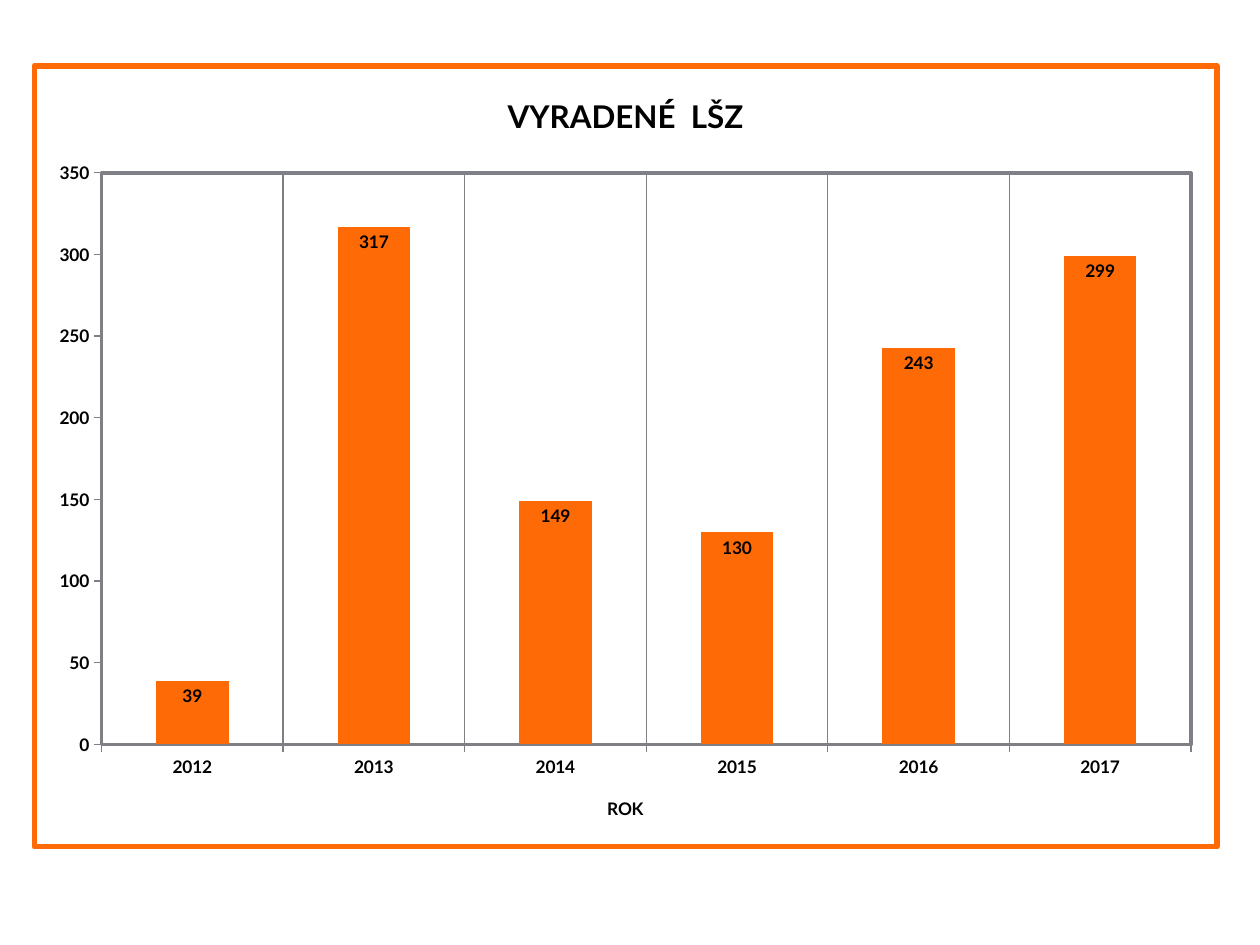
from lxml import etree
from pptx import Presentation
from pptx.chart.data import CategoryChartData
from pptx.dml.color import RGBColor
from pptx.enum.chart import XL_CHART_TYPE, XL_LABEL_POSITION, XL_TICK_MARK
from pptx.oxml import parse_xml
from pptx.oxml.ns import nsdecls, qn
from pptx.util import Inches, Pt

COLUMNS = XL_CHART_TYPE.COLUMN_CLUSTERED
INSIDE_END = XL_LABEL_POSITION.INSIDE_END
OUTSIDE = XL_TICK_MARK.OUTSIDE

COLORS = {"orange": "FE6A06", "grey": "7F7F86", "text": "000000"}
FONT = "Lato"
SLIDE_W, SLIDE_H = Inches(10), Inches(7.5)

TITLE = "VYRADENÉ  LŠZ"
AXIS_TITLE = "ROK"
RETIRED_BY_YEAR = {"2012": 39, "2013": 317, "2014": 149,
                   "2015": 130, "2016": 243, "2017": 299}

# Shares of the slide: left, top, width, height
CHART_BOX = (0.025, 0.067, 0.943, 0.832)
# Shares of the chart: position of the plot area
PLOT_BOX = {"x": 0.057, "y": 0.137, "w": 0.921, "h": 0.732}


def style_font(font, size):
    values = {"name": FONT, "size": Pt(size), "bold": True}
    for name, value in values.items():
        setattr(font, name, value)
    font.color.rgb = RGBColor.from_string(COLORS["text"])


def style_line(line, color, width):
    line.color.rgb = RGBColor.from_string(COLORS[color])
    line.width = Pt(width)


def set_title(owner, text, size):
    owner.has_title = True
    frame = (owner.chart_title if hasattr(owner, "chart_title")
             else owner.axis_title).text_frame
    frame.text = text
    style_font(frame.paragraphs[0].runs[0].font, size)


def outline(color, width):
    return parse_xml(
        f'<c:spPr {nsdecls("c", "a")}><a:noFill/>'
        f'<a:ln w="{Pt(width)}"><a:solidFill><a:srgbClr val="{COLORS[color]}"/>'
        '</a:solidFill><a:round/></a:ln></c:spPr>')


def place_plot(plot_area, box):
    for old in plot_area.findall(qn("c:layout")):
        plot_area.remove(old)
    layout = etree.Element(qn("c:layout"))
    manual = etree.SubElement(layout, qn("c:manualLayout"))
    settings = {"layoutTarget": "inner", "xMode": "edge", "yMode": "edge", **box}
    for name, value in settings.items():
        etree.SubElement(manual, qn(f"c:{name}")).set("val", str(value))
    plot_area.insert(0, layout)


def add_retired_chart(slide, box):
    data = CategoryChartData()
    data.categories = list(RETIRED_BY_YEAR)
    data.add_series("Series 1", list(RETIRED_BY_YEAR.values()))
    left, top, width, height = box
    chart = slide.shapes.add_chart(
        COLUMNS, int(left * SLIDE_W), int(top * SLIDE_H),
        int(width * SLIDE_W), int(height * SLIDE_H), data).chart
    chart.has_legend = False
    style_font(chart.font, 10)
    set_title(chart, TITLE, 18)

    # Columns and their values
    columns = chart.plots[0]
    columns.gap_width = 150
    columns.vary_by_categories = False
    fill = columns.series[0].format.fill
    fill.solid()
    fill.fore_color.rgb = RGBColor.from_string(COLORS["orange"])
    columns.has_data_labels = True
    labels = columns.data_labels
    labels.show_value = True
    labels.position = INSIDE_END
    style_font(labels.font, 10)

    # Axes: vertical grid lines only
    years, counts = chart.category_axis, chart.value_axis
    for axis in (years, counts):
        axis.major_tick_mark = OUTSIDE
        style_line(axis.format.line, "grey", 0.75)
        style_font(axis.tick_labels.font, 10)
    years.has_major_gridlines = True
    style_line(years.major_gridlines.format.line, "grey", 0.75)
    set_title(years, AXIS_TITLE, 10)
    counts.has_major_gridlines = False
    counts.minimum_scale, counts.maximum_scale, counts.major_unit = 0, 350, 50

    # Frames of the plot area and of the whole chart
    chart_part = chart.element.find(qn("c:chart"))
    plot_area = chart_part.find(qn("c:plotArea"))
    place_plot(plot_area, PLOT_BOX)
    plot_area.append(outline("grey", 2))
    chart_part.addnext(outline("orange", 3))


def main():
    deck = Presentation()
    deck.slide_width, deck.slide_height = SLIDE_W, SLIDE_H
    slide = deck.slides.add_slide(deck.slide_layouts[6])
    add_retired_chart(slide, CHART_BOX)
    deck.save("out.pptx")


if __name__ == "__main__":
    main()
